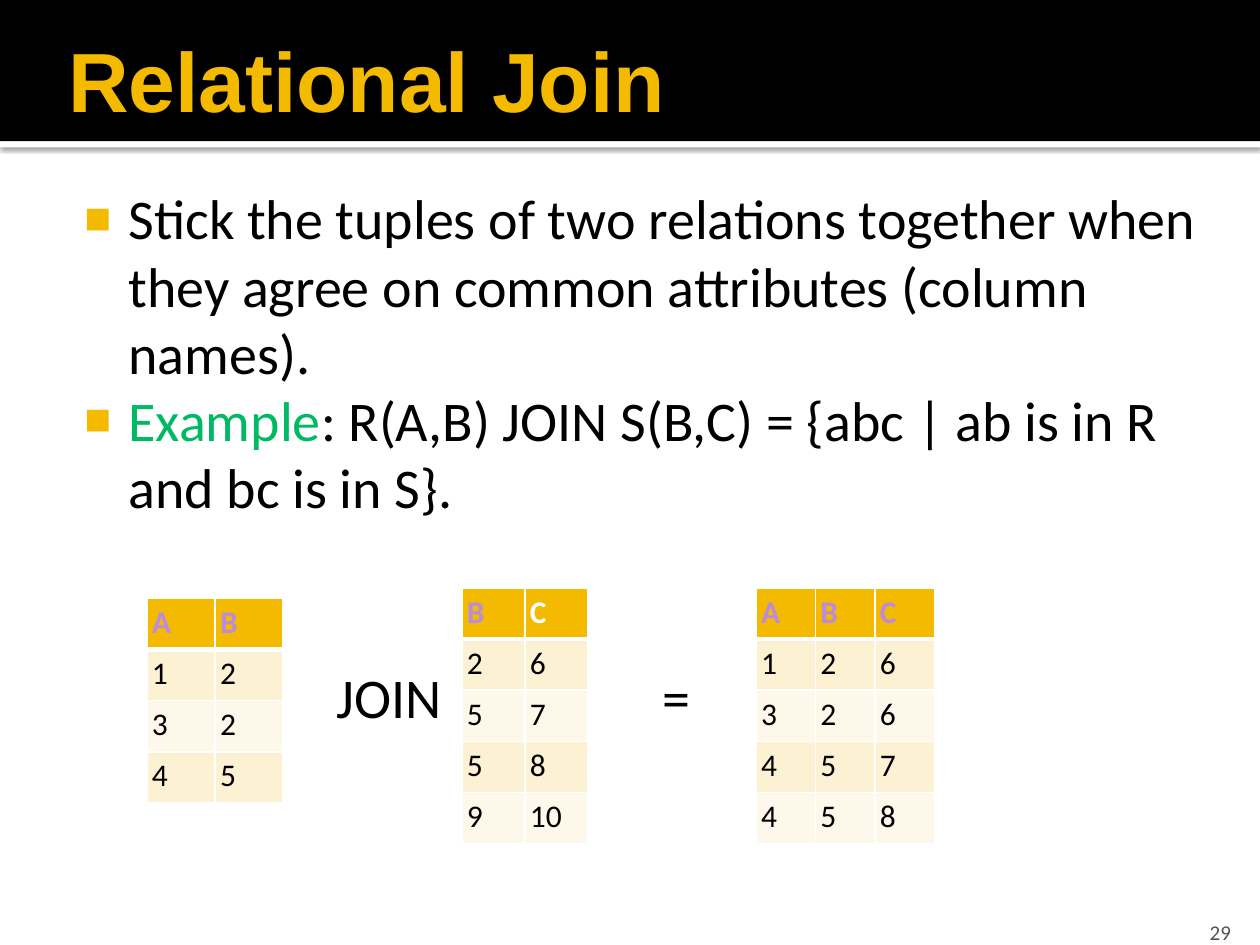
from lxml import etree
from pptx import Presentation
from pptx.dml.color import RGBColor
from pptx.enum.shapes import MSO_SHAPE
from pptx.enum.text import MSO_ANCHOR, PP_ALIGN
from pptx.oxml.ns import qn
from pptx.util import Pt

RECTANGLE = MSO_SHAPE.RECTANGLE
TOP, MIDDLE, BOTTOM = MSO_ANCHOR.TOP, MSO_ANCHOR.MIDDLE, MSO_ANCHOR.BOTTOM
LEFT, RIGHT = PP_ALIGN.LEFT, PP_ALIGN.RIGHT

COLORS = {
    "black": "000000", "white": "FFFFFF", "gold": "F4BA00", "green": "00BA63",
    "gray": "535353", "lilac": "BB8CDD", "band": "FDF1D4", "pale": "FEF8EB",
}
TITLE = "Relational Join"
BULLETS = [
    [("Stick the tuples of two relations together when they agree on common "
      "attributes (column names).", "black")],
    [("Example", "green"),
     (": R(A,B) JOIN S(B,C) = {abc | ab is in R and bc is in S}.", "black")],
]
# text, size, color, alignment, anchor, box in points
LABELS = [
    ("JOIN", 32, "black", LEFT, TOP, (189.3, 375.6, 72, 45)),
    ("=", 32, "black", LEFT, TOP, (375.6, 375.6, 36, 45)),
    ("29", 12, "gray", RIGHT, BOTTOM, (676.3, 522, 30, 21)),
]
# left, top, column width, header colors, rows
RELATIONS = [
    (84, 342, 38.9, ["lilac", "lilac"],
     [["A", "B"], [1, 2], [3, 2], [4, 5]]),
    (432, 336, 34, ["lilac", "lilac", "lilac"],
     [["A", "B", "C"], [1, 2, 6], [3, 2, 6], [4, 5, 7], [4, 5, 8]]),
    (264, 336, 36, ["lilac", "white"],
     [["B", "C"], [2, 6], [5, 7], [5, 8], [9, 10]]),
]
ROW_HEIGHT = 29.2
INSET = 2.88
BODY_BOX = (36, 102.24, 671.76, 250)


def rgb(name):
    return RGBColor.from_string(COLORS[name])


def add_run(paragraph, text, size, color, font="Calibri", bold=False):
    run = paragraph.add_run()
    run.text = text
    run.font.size = Pt(size)
    run.font.name = font
    run.font.bold = bold
    run.font.color.rgb = rgb(color)


def add_color(parent, name):
    return etree.SubElement(parent, qn("a:srgbClr"), val=COLORS[name])


def set_margins(target):
    """Apply the common inset to a text frame or a table cell."""
    target.margin_left = target.margin_right = Pt(INSET)
    target.margin_top = target.margin_bottom = Pt(INSET)


def add_bar(slide, top, height, color):
    bar = slide.shapes.add_shape(RECTANGLE, 0, Pt(top), Pt(720), Pt(height))
    bar.shadow.inherit = False
    bar.fill.solid()
    bar.fill.fore_color.rgb = rgb(color)
    bar.line.fill.background()
    slide.shapes.title._element.addprevious(bar._element)
    return bar


def add_bar_shadow(bar):
    effects = bar._element.spPr.find(qn("a:effectLst"))
    shadow = etree.SubElement(
        effects, qn("a:outerShdw"), blurRad=str(Pt(3)), dist=str(Pt(0.8)),
        dir="5400000", algn="tl", rotWithShape="0")
    etree.SubElement(add_color(shadow, "black"), qn("a:alpha"), val="60000")


def format_title(title):
    title.left, title.top, title.width, title.height = 0 + Pt(36), 0, Pt(684), Pt(90)
    frame = title.text_frame
    set_margins(frame)
    frame.vertical_anchor = MIDDLE
    paragraph = frame.paragraphs[0]
    paragraph.alignment = LEFT
    add_run(paragraph, TITLE, 48, "gold", "Arial", True)


def add_text_box(slide, box, anchor=TOP):
    frame = slide.shapes.add_textbox(*map(Pt, box)).text_frame
    frame.word_wrap = True
    frame.vertical_anchor = anchor
    set_margins(frame)
    return frame


def add_bullets(slide):
    frame = add_text_box(slide, BODY_BOX)
    for index, runs in enumerate(BULLETS):
        paragraph = frame.add_paragraph() if index else frame.paragraphs[0]
        properties = paragraph._p.get_or_add_pPr()
        properties.set("marL", str(Pt(34.56)))
        properties.set("indent", str(Pt(-25.2)))
        add_color(etree.SubElement(properties, qn("a:buClr")), "gold")
        etree.SubElement(properties, qn("a:buSzPct"), val="80000")
        etree.SubElement(properties, qn("a:buFont"), typeface="Arial")
        etree.SubElement(properties, qn("a:buChar"), char="■")
        for text, color in runs:
            add_run(paragraph, text, 32, color)


def set_borders(cell, row):
    """Draw white borders, thicker between the header and the first row."""
    widths = {"L": 1, "R": 1, "T": 3 if row == 1 else 1, "B": 3 if row == 0 else 1}
    properties = cell._tc.get_or_add_tcPr()
    for side, width in widths.items():
        line = etree.SubElement(properties, qn(f"a:ln{side}"), w=str(Pt(width)))
        add_color(etree.SubElement(line, qn("a:solidFill")), "white")


def add_relation(slide, left, top, column_width, header_colors, rows):
    columns = len(header_colors)
    table = slide.shapes.add_table(
        len(rows), columns, Pt(left), Pt(top),
        Pt(columns * column_width), Pt(len(rows) * ROW_HEIGHT)).table
    table.horz_banding = False
    for column in table.columns:
        column.width = Pt(column_width)
    for row, values in enumerate(rows):
        table.rows[row].height = Pt(ROW_HEIGHT)
        fill = "gold" if row == 0 else ("pale", "band")[row % 2]
        for column, value in enumerate(values):
            cell = table.cell(row, column)
            set_margins(cell)
            set_borders(cell, row)
            cell.fill.solid()
            cell.fill.fore_color.rgb = rgb(fill)
            color = "black" if row else header_colors[column]
            add_run(cell.text_frame.paragraphs[0], str(value), 18, color, bold=row == 0)


def main():
    presentation = Presentation()
    presentation.slide_width, presentation.slide_height = Pt(720), Pt(540)
    slide = presentation.slides.add_slide(presentation.slide_layouts[5])
    add_bar_shadow(add_bar(slide, 80.64, 3.6, "white"))
    add_bar(slide, 0, 80.64, "black")
    format_title(slide.shapes.title)
    add_bullets(slide)
    for text, size, color, alignment, anchor, box in LABELS:
        paragraph = add_text_box(slide, box, anchor).paragraphs[0]
        paragraph.alignment = alignment
        add_run(paragraph, text, size, color)
    for relation in RELATIONS:
        add_relation(slide, *relation)
    presentation.save("out.pptx")


if __name__ == "__main__":
    main()
